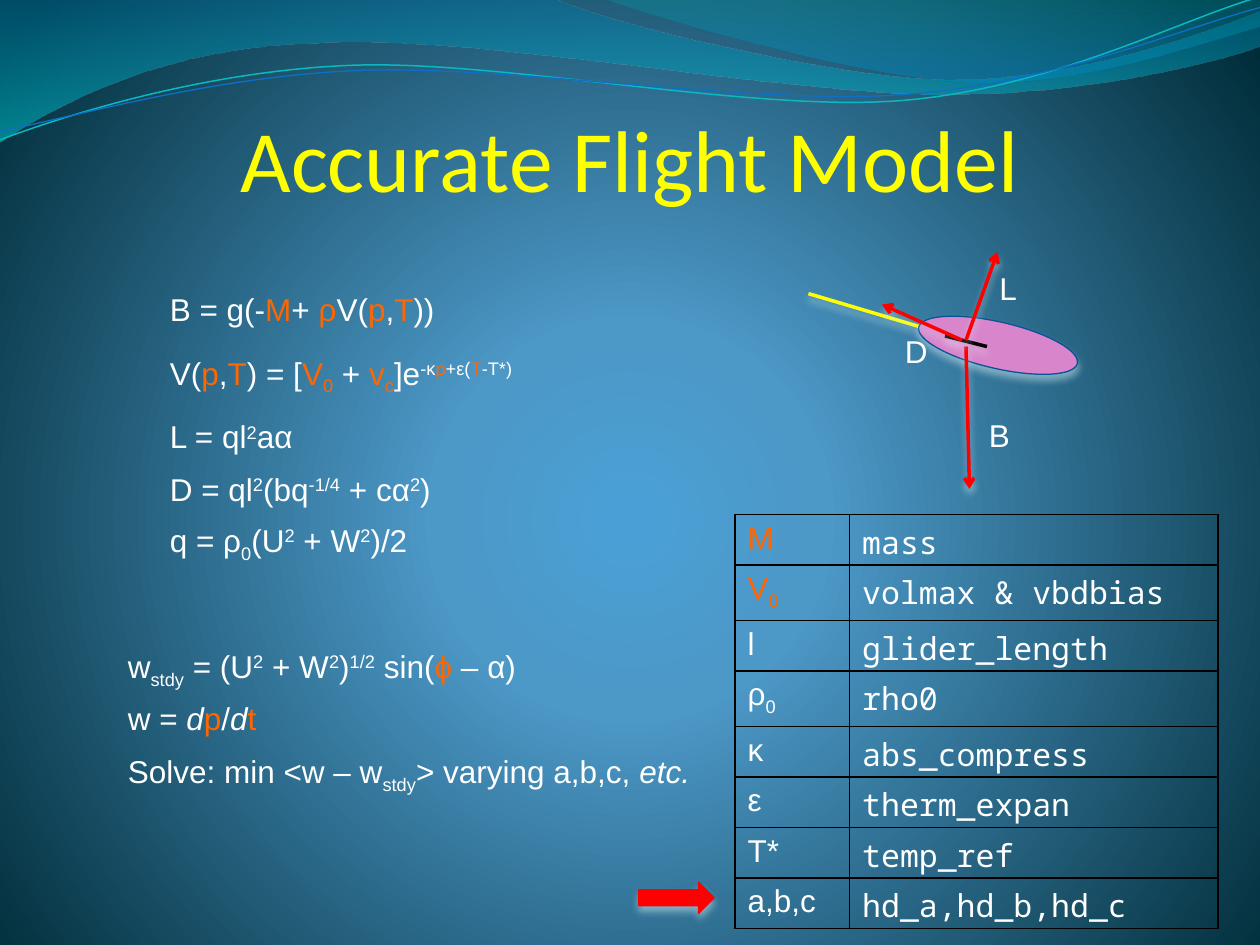
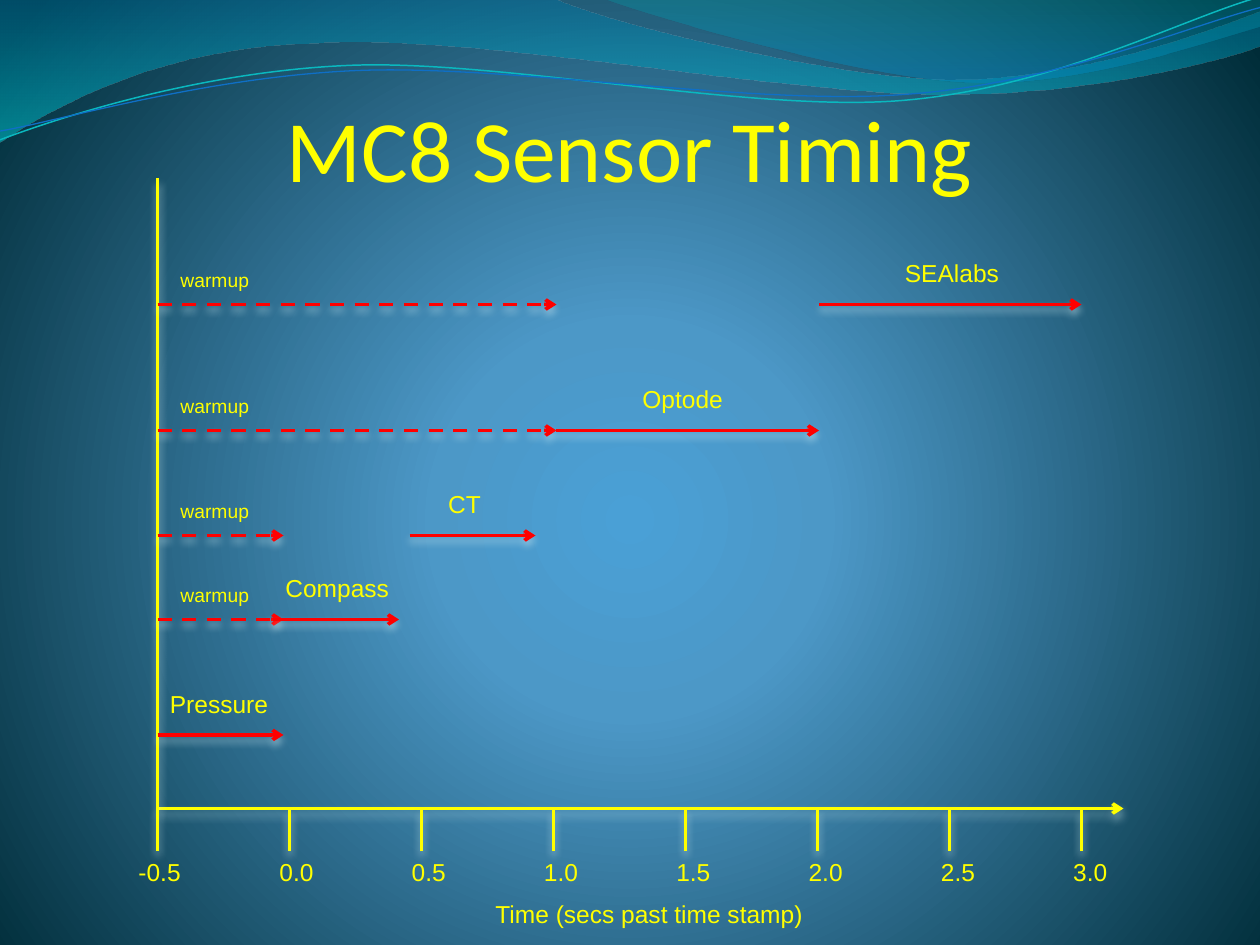
from lxml import etree
from pptx import Presentation
from pptx.dml.color import RGBColor
from pptx.enum.dml import MSO_LINE
from pptx.enum.shapes import MSO_CONNECTOR, MSO_SHAPE
from pptx.enum.text import MSO_ANCHOR, MSO_AUTO_SIZE, PP_ALIGN
from pptx.oxml import parse_xml
from pptx.oxml.ns import nsdecls, qn
from pptx.util import Pt

STRAIGHT = MSO_CONNECTOR.STRAIGHT
ELLIPSE = MSO_SHAPE.OVAL
BLOCK_ARROW = MSO_SHAPE.RIGHT_ARROW
DASH = MSO_LINE.DASH
CENTER = PP_ALIGN.CENTER
BOTTOM = MSO_ANCHOR.BOTTOM
GROW = MSO_AUTO_SIZE.SHAPE_TO_FIT_TEXT

YELLOW, RED, WHITE, BLACK = "FFFF00", "FF0000", "FFFFFF", "000000"
ORANGE, PINK, NAVY, GLOW = "FF6600", "D985CB", "095295", "DBF5F9"
SANS, MONO, TITLE_FONT = "Arial", "Noto Sans Mono", "Calibri"

# Each wave: start point, then segments of one point (line) or three (curve)
WAVE_FILLS = [
    ([(0, 45, "0074A1"), (100, 55, "00C6CF")], (0, 0), [
        [(316.8, -0.7)],
        [(342.7, 12.2), (478.1, 45.4), (545.8, 45.4)],
        [(614.2, 45.4), (689.8, 18.7), (720, 6.5)],
        [(720.7, 25.9)],
        [(707.8, 31.7), (626.4, 54.7), (537.1, 54)],
        [(447.8, 54), (275, 20.2), (185, 24.5)],
        [(92.9, 25.9), (33.1, 59.8), (-0.7, 81.4)]]),
    ([(0, 30, "00A1A9"), (80, 45, "008BBF")], (344.9, -0.7), [
        [(366.5, 7.9), (491, 44.6), (553.7, 46.8)],
        [(616.3, 49.7), (691.9, 23), (720, 15.1)],
        [(720, 0)]]),
]
WAVE_LINES = [
    ("0AB8BF", 0.85, (0, 79.9), [
        [(34.6, 67), (113.8, 41), (199.4, 37.4)],
        [(284.4, 33.8), (427, 64.1), (513.4, 57.6)],
        [(599.8, 51.1), (675.4, 10.8), (718.6, -1.4)]]),
    ("0F6FC6", 0.75, (0, 74.9), [
        [(33.8, 69.1), (118.1, 43.9), (203.8, 40.3)],
        [(290.2, 36.7), (429.8, 60.5), (516.2, 54)],
        [(601.9, 48.2), (678.2, 15.1), (720, 4.3)]]),
]

# Markup in text: # orange, | subscript, ^ superscript, ~ italic (each toggles)
FLIGHT_EQUATIONS = [
    (0, "B = g(-#M#+ #ρ#V(#p#,#T#))"),
    (36.5, "V(#p#,#T#) = [#V|0|# + #v|c|#]e^-κ#p#+ε(#T#-T*)^"),
    (73, "L = ql^2^aα"),
    (103, "D = ql^2^(bq^-1/4^ + cα^2^)"),
    (132, "q = ρ|0|(U^2^ + W^2^)/2"),
]
FIT_EQUATIONS = [
    (0, "w|stdy| = (U^2^ + W^2^)^1/2^ sin(#ϕ# – α)"),
    (30, "w = ~d~#p#/~d~#t#"),
    (60, "Solve: min <w – w|stdy|> varying a,b,c, ~etc.~"),
]
PARAMETERS = [
    ("#M#", "mass"), ("#V|0|#", "volmax & vbdbias"), ("l", "glider_length"),
    ("ρ|0|", "rho0"), ("κ", "abs_compress"), ("ε", "therm_expan"),
    ("T*", "temp_ref"), ("a,b,c", "hd_a,hd_b,hd_c"),
]
# Sensor, row height, warmup length, start, end, label left, label width
SENSORS = [
    ("Pressure", 318, 0, 0, 72, 0, 71.3),
    ("Compass", 252, 72, 66, 138, 66, 74.2),
    ("CT", 204, 72, 144, 216, 159, 33.1),
    ("Optode", 144, 228, 228, 378, 270, 61.2),
    ("SEAlabs", 72, 228, 378, 528, 420, 72),
]


def rgb(code):
    return RGBColor.from_string(code)


def write(para, text, size=18, font=SANS, color=WHITE):
    """Write marked-up text into a paragraph, one span for each format."""
    active, pending = set(), ""
    for mark in text + "\0":
        if mark not in "#|^~\0":
            pending += mark
            continue
        if pending:
            span = para.add_run()
            span.text = pending
            span.font.size, span.font.name = Pt(size), font
            span.font.color.rgb = rgb(ORANGE if "#" in active else color)
            if "~" in active:
                span.font.italic = True
            if active & {"|", "^"}:
                baseline = "-25000" if "|" in active else "30000"
                span.font._element.set("baseline", baseline)
            pending = ""
        active ^= {mark}


def add_label(page, left, top, width, text, wrap=False, size=18, **style):
    box = page.shapes.add_textbox(Pt(left), Pt(top), Pt(width), Pt(size * 1.21 + 7.2))
    box.text_frame.word_wrap = wrap
    box.text_frame.auto_size = GROW
    write(box.text_frame.paragraphs[0], text, size=size, **style)


def add_glow(shape):
    effects = etree.SubElement(shape._element.spPr, qn("a:effectLst"))
    effects.append(parse_xml(
        f'<a:outerShdw {nsdecls("a")} blurRad="{Pt(4.5)}" dist="{Pt(3)}" dir="5400000" '
        f'rotWithShape="0"><a:srgbClr val="{GLOW}"><a:alpha val="48000"/></a:srgbClr>'
        '</a:outerShdw>'))


def add_line(page, start, end, color, arrow=False, dashed=False):
    line = page.shapes.add_connector(STRAIGHT, *map(Pt, start + end))
    line.line.color.rgb, line.line.width = rgb(color), Pt(2)
    if dashed:
        line.line.dash_style = DASH
    if arrow:
        etree.SubElement(line.line._get_or_add_ln(), qn("a:tailEnd"), type="arrow")
    add_glow(line)


def add_solid(page, kind, left, top, width, height, fill, outline, rotation=0):
    shape = page.shapes.add_shape(kind, Pt(left), Pt(top), Pt(width), Pt(height))
    shape.rotation = rotation
    shape.fill.solid()
    shape.fill.fore_color.rgb = rgb(fill)
    shape.line.color.rgb, shape.line.width = rgb(outline), Pt(0.75)
    add_glow(shape)


def gradient(stops, direction):
    colors = "".join(
        f'<a:gs pos="{place * 1000}"><a:srgbClr val="{code}">'
        f'<a:alpha val="{alpha * 1000}"/></a:srgbClr></a:gs>'
        for place, alpha, code in stops)
    return (f'<a:gradFill {nsdecls("a")} rotWithShape="1"><a:gsLst>{colors}</a:gsLst>'
            f'{direction}</a:gradFill>')


def add_wave(page, start, segments, closed):
    """Freeform through all points, with each group of three made a curve."""
    builder = page.shapes.build_freeform(Pt(start[0]), Pt(start[1]))
    for segment in segments:
        builder.add_line_segments([(Pt(x), Pt(y)) for x, y in segment], close=False)
    if closed:
        builder.add_line_segments([], close=True)
    wave = builder.convert_to_shape()
    steps = iter(list(wave._element.spPr.iter(qn("a:lnTo"))))
    for segment in segments:
        corners = [next(steps) for _ in segment]
        if len(corners) == 3:
            curve = etree.Element(qn("a:cubicBezTo"))
            corners[0].addprevious(curve)
            for corner in corners:
                curve.append(corner[0])
                corner.getparent().remove(corner)
    wave.shadow.inherit = False
    wave.fill.background()
    return wave


def add_page(deck, title, title_top):
    """Blank page with the shared background, waves and title."""
    page = deck.slides.add_slide(deck.slide_layouts[6])
    glow = gradient(
        [(0, 100, "4AA0D6"), (25, 100, "4C98C7"), (100, 100, "002C38")],
        '<a:path path="circle"><a:fillToRect l="10000" t="110000" r="10000" b="100000"/></a:path>')
    page._element.cSld.insert(0, parse_xml(
        f'<p:bg {nsdecls("p", "a")}><p:bgPr>{glow}<a:effectLst/></p:bgPr></p:bg>'))

    for stops, start, segments in WAVE_FILLS:
        wave = add_wave(page, start, segments, True)
        wave.line.fill.background()
        properties = wave._element.spPr
        properties.replace(properties.find(qn("a:noFill")),
                           parse_xml(gradient(stops, '<a:lin ang="5400000" scaled="1"/>')))
    for color, width, start, segments in WAVE_LINES:
        wave = add_wave(page, start, segments, False)
        wave.line.color.rgb, wave.line.width = rgb(color), Pt(width)

    frame = page.shapes.add_textbox(Pt(36), Pt(title_top), Pt(648), Pt(90)).text_frame
    frame.word_wrap, frame.vertical_anchor = True, BOTTOM
    frame.margin_left = frame.margin_right = frame.margin_bottom = 0
    frame.paragraphs[0].alignment = CENTER
    write(frame.paragraphs[0], title, size=50, font=TITLE_FONT, color=YELLOW)
    return page


def add_equations(page, left, top, equations):
    for offset, text in equations:
        add_label(page, left, top + offset, 366, text, wrap=True)


def add_glider(page, left, top):
    """Glider body with its lift, drag and buoyancy forces."""
    def line(x1, y1, x2, y2, color, arrow=False):
        add_line(page, (left + x1, top + y1), (left + x2, top + y2), color, arrow)

    # Antenna, hull and wing
    line(70, 44.6, 0, 23.8, YELLOW)
    add_solid(page, ELLIPSE, left + 61.8, top + 40, 93, 26.6, PINK, NAVY, 12.9)
    line(102, 54, 78, 48, BLACK)
    # Forces
    line(90, 54, 92, 135.4, RED, True)
    line(90, 50.4, 108, 0, RED, True)
    line(87.8, 50.4, 42, 30, RED, True)
    for name, x, y, width in (("B", 96, 90, 26.6), ("L", 102, 6, 23.8), ("D", 48, 42, 27.4)):
        add_label(page, left + x, top + y, width, name)


def add_parameters(page, left, top):
    widths, row_height = (65.5, 210.5), 28.1
    table = page.shapes.add_table(len(PARAMETERS), 2, Pt(left), Pt(top), Pt(sum(widths)),
                                  Pt(row_height * len(PARAMETERS))).table
    table.first_row = table.horz_banding = False
    for column, width in zip(table.columns, widths):
        column.width = Pt(width)
    for row, texts in enumerate(PARAMETERS):
        table.rows[row].height = Pt(row_height)
        for column, (text, font) in enumerate(zip(texts, (SANS, MONO))):
            cell = table.cell(row, column)
            write(cell.text_frame.paragraphs[0], text, font=font)
            cell.fill.background()
            for order, side in enumerate("LRTB"):
                cell._tc.get_or_add_tcPr().insert(order, parse_xml(
                    f'<a:ln{side} {nsdecls("a")} w="{Pt(1)}"><a:solidFill>'
                    f'<a:srgbClr val="{BLACK}"/></a:solidFill></a:ln{side}>'))


def add_timeline(page, left, top):
    """Time axis with one row of arrows for each sensor."""
    axis, style = top + 360, {"size": 14, "color": YELLOW}
    # Axes
    add_line(page, (left, axis), (left + 552, axis), YELLOW, arrow=True)
    add_line(page, (left, top), (left, axis), YELLOW)
    add_label(page, left + 186, axis + 48, 191.5, "Time (secs past time stamp)", **style)
    # Ticks every half second
    for tick in range(8):
        x = left + 75.43 * tick
        add_line(page, (x, axis), (x, axis + 24), YELLOW)
        minus = 5 if tick == 0 else 0
        add_label(page, left - 13 + 75.6 * tick - minus, axis + 24, 33.8 + minus,
                  f"{tick / 2 - 0.5:.1f}", **style)
    # Sensors
    for name, offset, warmup, start, end, label_left, label_width in SENSORS:
        y = top + offset
        if warmup:
            add_line(page, (left, y), (left + warmup, y), RED, arrow=True, dashed=True)
            add_label(page, left + 6, y - 24, 54, "warmup", size=11, color=YELLOW)
        add_line(page, (left + start, y), (left + end, y), RED, arrow=True)
        add_label(page, left + label_left, y - 30, label_width, name, **style)


def main():
    deck = Presentation()
    deck.slide_width, deck.slide_height = Pt(720), Pt(540)

    page = add_page(deck, "Accurate Flight Model", 30)
    add_glider(page, 462, 144)
    add_equations(page, 90, 162, FLIGHT_EQUATIONS)
    add_equations(page, 66, 366, FIT_EQUATIONS)
    add_parameters(page, 420, 294)
    add_solid(page, BLOCK_ARROW, 365, 504, 43.2, 18, RED, RED)

    page = add_page(deck, "MC8 Sensor Timing", 24)
    add_timeline(page, 90, 102)

    deck.save("out.pptx")


if __name__ == "__main__":
    main()
